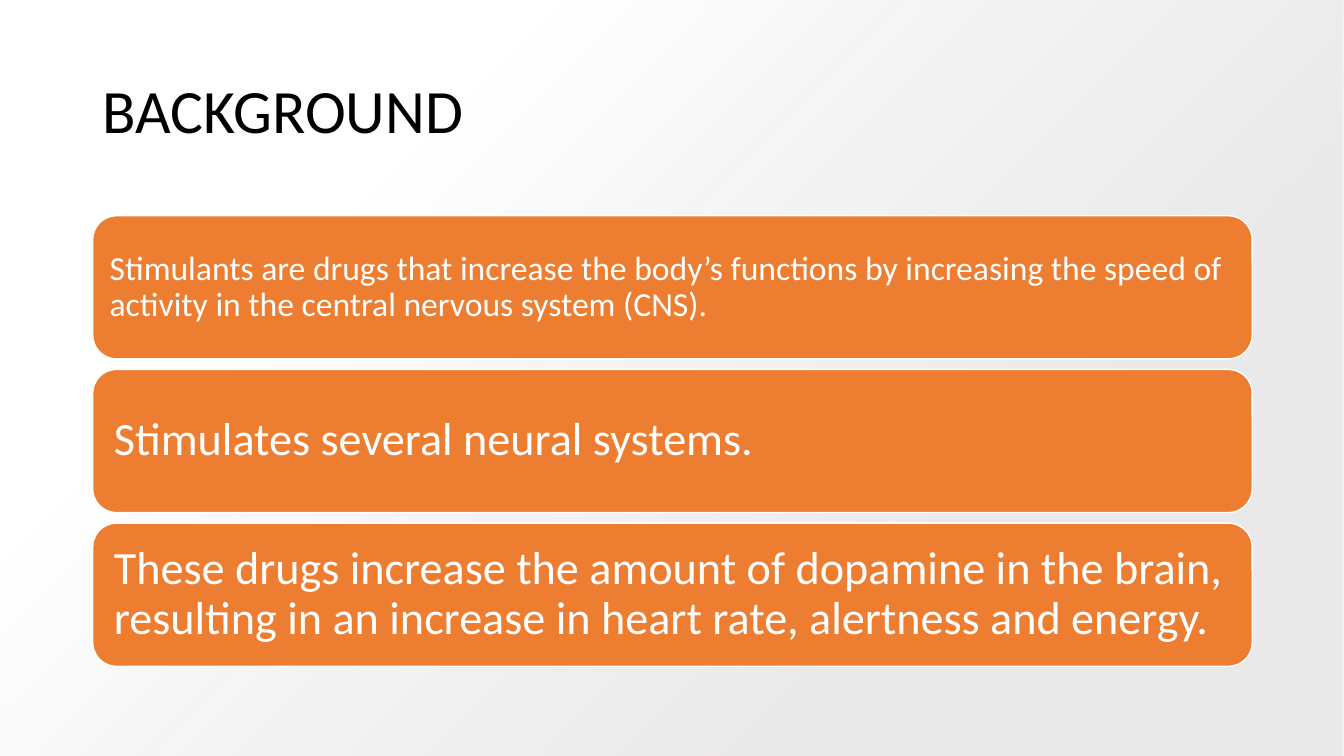
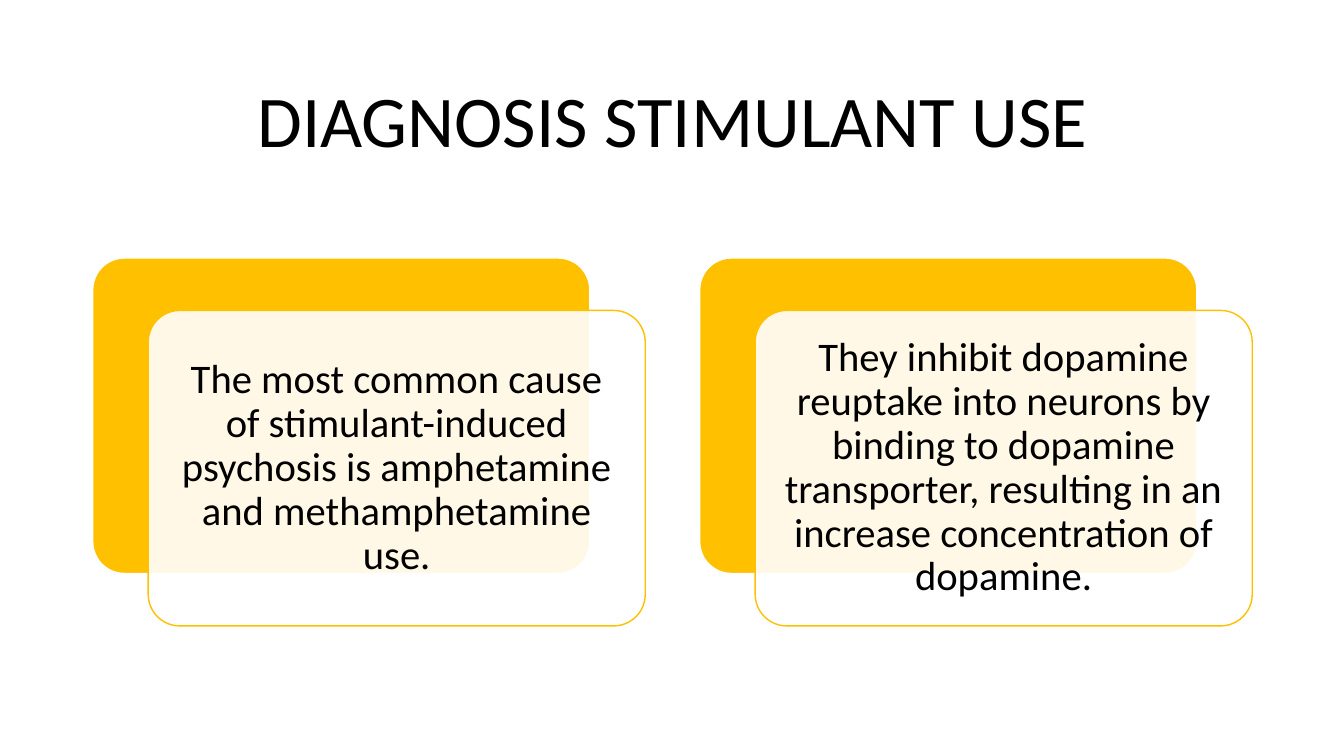
from dataclasses import dataclass

from lxml.etree import SubElement
from pptx import Presentation
from pptx.dml.color import RGBColor
from pptx.enum.shapes import MSO_SHAPE
from pptx.enum.text import MSO_ANCHOR, MSO_AUTO_SIZE, PP_ALIGN
from pptx.oxml import parse_xml
from pptx.oxml.ns import nsdecls, qn
from pptx.util import Inches, Pt


@dataclass(frozen=True)
class Theme:
    font: str = "Calibri"
    black: RGBColor = RGBColor(0x00, 0x00, 0x00)
    white: RGBColor = RGBColor(0xFF, 0xFF, 0xFF)
    grey: RGBColor = RGBColor(0xE7, 0xE6, 0xE6)
    orange: RGBColor = RGBColor(0xED, 0x7D, 0x31)
    gold: RGBColor = RGBColor(0xFF, 0xC0, 0x00)
    title_size: int = 44
    large_title_size: int = 52
    small_bar_size: int = 24
    bar_size: int = 33
    card_size: int = 29
    line_spacing: float = 0.9
    outline: int = 1


@dataclass(frozen=True)
class Box:
    left: float
    top: float
    width: float
    height: float

    def lengths(self):
        return [Inches(n) for n in (self.left, self.top, self.width, self.height)]


THEME = Theme()
PAGE = Box(0, 0, 13.33, 7.5)
MARGIN = 0.92
CONTENT_WIDTH = 11.5


def write_text(text_frame, text, size, color, alignment):
    text_frame.word_wrap = True
    text_frame.auto_size = MSO_AUTO_SIZE.NONE
    text_frame.vertical_anchor = MSO_ANCHOR.MIDDLE
    paragraph = text_frame.paragraphs[0]
    paragraph.alignment = alignment
    paragraph.line_spacing = THEME.line_spacing
    run = paragraph.add_run()
    run.text = text
    run.font.name = THEME.font
    run.font.size = Pt(size)
    run.font.color.rgb = color


def add_title(slide, box, text, size, alignment):
    title = slide.shapes.title
    title.left, title.top, title.width, title.height = box.lengths()
    write_text(title.text_frame, text, size, THEME.black, alignment)


def add_panel(slide, box, fill, line, corner=None):
    panel = slide.shapes.add_shape(MSO_SHAPE.ROUNDED_RECTANGLE, *box.lengths())
    panel.shadow.inherit = False
    panel.fill.solid()
    panel.fill.fore_color.rgb = fill
    panel.line.color.rgb = line
    panel.line.width = Pt(THEME.outline)
    if corner is not None:
        panel.adjustments[0] = corner
    return panel


def set_insets(text_frame, inset):
    text_frame.margin_left = text_frame.margin_right = Inches(inset)
    text_frame.margin_top = text_frame.margin_bottom = Inches(inset)


def set_opacity(shape, percent):
    color = shape.fill._xPr.find(qn("a:solidFill"))[0]
    SubElement(color, qn("a:alpha")).set("val", str(percent * 1000))


def add_backdrop(slide, box):
    """Lay a soft gradient that spreads from the bottom right corner."""
    backdrop = slide.shapes.add_shape(MSO_SHAPE.RECTANGLE, *box.lengths())
    backdrop.shadow.inherit = False
    backdrop.line.fill.background()
    gradient = parse_xml(
        f'<a:gradFill {nsdecls("a")} rotWithShape="1"><a:gsLst>'
        f'<a:gs pos="28000"><a:srgbClr val="{THEME.grey}">'
        '<a:alpha val="84000"/></a:srgbClr></a:gs>'
        f'<a:gs pos="74000"><a:srgbClr val="{THEME.white}"/></a:gs>'
        '</a:gsLst><a:path path="circle">'
        '<a:fillToRect l="100000" t="100000"/></a:path></a:gradFill>'
    )
    backdrop.element.spPr.find(qn("a:prstGeom")).addnext(gradient)
    tree = slide.shapes._spTree
    tree.remove(backdrop.element)
    tree.insert(2, backdrop.element)


def add_bars(slide, box, bars):
    """Stack equal bars down the box; each bar is (text, size, inset)."""
    height = 1.42
    pitch = (box.height - height) / (len(bars) - 1)
    for index, (text, size, inset) in enumerate(bars):
        place = Box(box.left, box.top + index * pitch, box.width, height)
        bar = add_panel(slide, place, THEME.orange, THEME.white)
        set_insets(bar.text_frame, inset)
        write_text(bar.text_frame, text, size, THEME.white, PP_ALIGN.LEFT)


def add_card(slide, box, text):
    """Overlap a translucent text panel on a gold one, within the box."""
    shift_x, shift_y = 0.55, 0.52
    width, height = box.width - shift_x, box.height - shift_y
    back = Box(box.left, box.top, width, height)
    front = Box(box.left + shift_x, box.top + shift_y, width, height)
    add_panel(slide, back, THEME.gold, THEME.white, corner=0.1)
    panel = add_panel(slide, front, THEME.white, THEME.gold, corner=0.1)
    set_opacity(panel, 90)
    set_insets(panel.text_frame, 0.12)
    write_text(panel.text_frame, text, THEME.card_size, THEME.black, PP_ALIGN.CENTER)


def add_cards(slide, box, texts):
    width = 5.48
    pitch = (box.width - width) / (len(texts) - 1)
    for index, text in enumerate(texts):
        add_card(slide, Box(box.left + index * pitch, box.top, width, box.height), text)


def add_title_only_slide(presentation):
    return presentation.slides.add_slide(presentation.slide_layouts[5])


def build_background_slide(presentation):
    slide = add_title_only_slide(presentation)
    add_backdrop(slide, PAGE)
    add_title(slide, Box(MARGIN, 0.4, CONTENT_WIDTH, 1.45), "BACKGROUND",
              THEME.title_size, PP_ALIGN.LEFT)
    add_bars(slide, Box(MARGIN, 2.14, CONTENT_WIDTH, 4.47), [
        ("Stimulants are drugs that increase the body’s functions by increasing "
         "the speed of activity in the central nervous system (CNS).",
         THEME.small_bar_size, 0.1),
        ("Stimulates several neural systems.", THEME.bar_size, 0.14),
        ("These drugs increase the amount of dopamine in the brain, resulting in "
         "an increase in heart rate, alertness and energy.",
         THEME.bar_size, 0.14),
    ])


def build_diagnosis_slide(presentation):
    slide = add_title_only_slide(presentation)
    add_title(slide, Box(MARGIN, 0.61, CONTENT_WIDTH, 1.24),
              "DIAGNOSIS STIMULANT USE", THEME.large_title_size, PP_ALIGN.CENTER)
    add_cards(slide, Box(MARGIN, 2.56, CONTENT_WIDTH, 3.65), [
        "The most common cause of stimulant-induced psychosis is amphetamine "
        "and methamphetamine use.",
        "They inhibit dopamine reuptake into neurons by binding to dopamine "
        "transporter, resulting in an increase concentration of dopamine.",
    ])


def main():
    presentation = Presentation()
    presentation.slide_width = Inches(PAGE.width)
    presentation.slide_height = Inches(PAGE.height)
    build_background_slide(presentation)
    build_diagnosis_slide(presentation)
    presentation.save("out.pptx")


if __name__ == "__main__":
    main()
